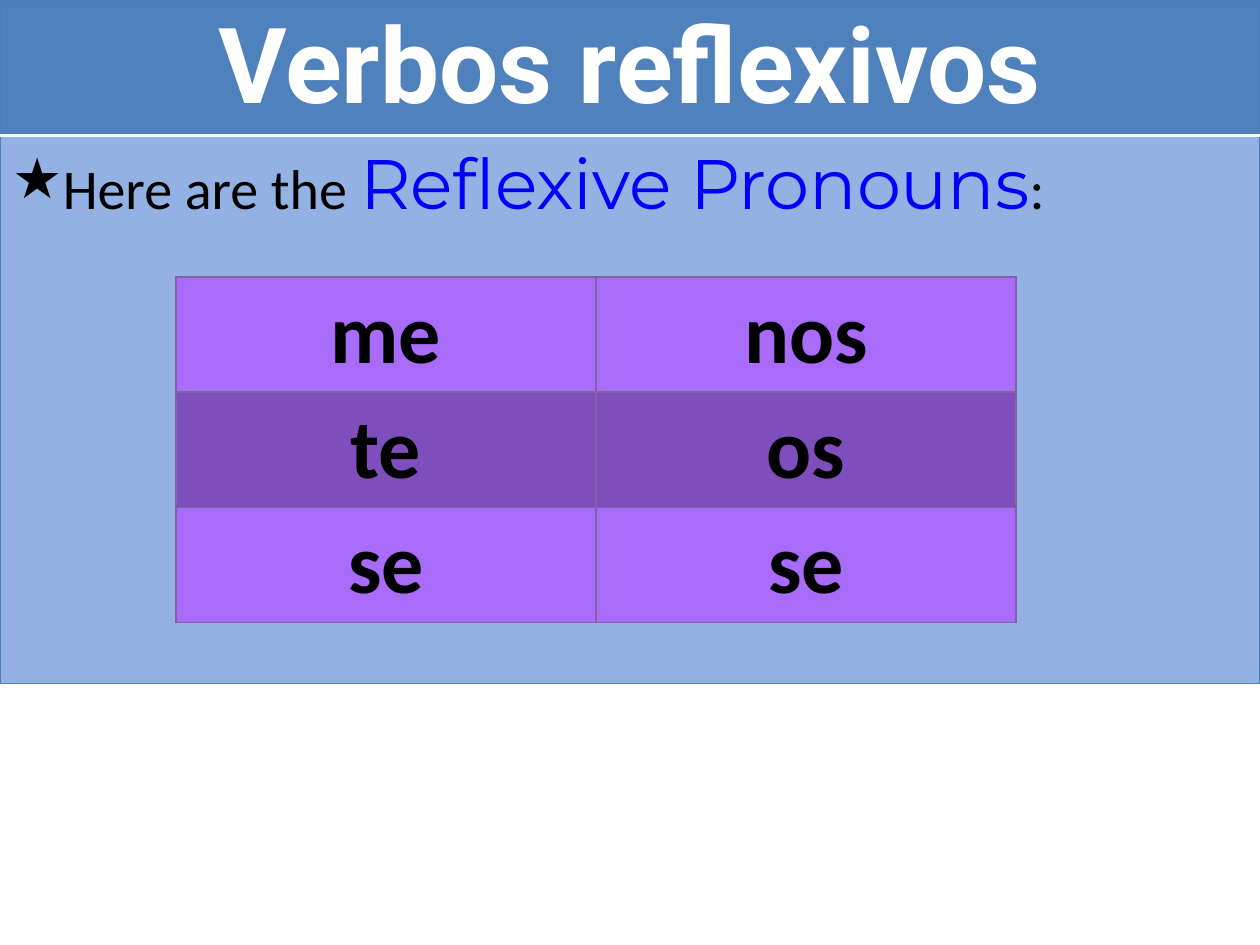
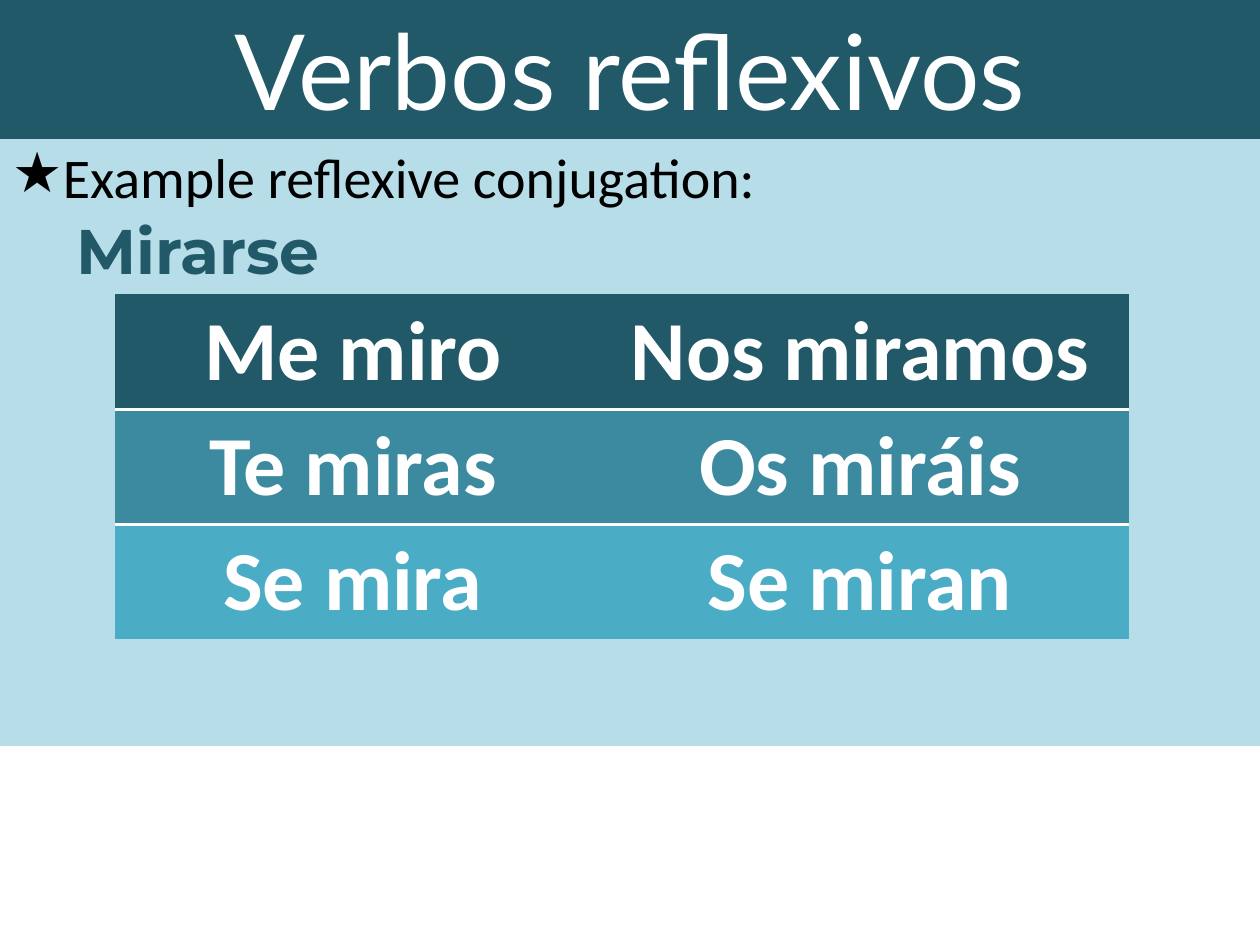
from lxml.etree import SubElement
from pptx import Presentation
from pptx.dml.color import RGBColor
from pptx.enum.text import PP_ALIGN
from pptx.oxml.ns import qn
from pptx.util import Emu, Pt

EMU_PER_PX = 914400 / 126
SLIDE_WIDTH, SLIDE_HEIGHT = 1260, 945
PRONOUN_ROW_HEIGHT = 115
PLAIN_TABLE_STYLE = "{2D5ABB26-0587-4C30-8999-92F81FD0307C}"
TITLE = "Verbos reflexivos"

WHITE = RGBColor(0xFF, 0xFF, 0xFF)
BLACK = RGBColor(0x00, 0x00, 0x00)
LINK_BLUE = RGBColor(0x00, 0x00, 0xFF)
BLUE = RGBColor(0x4F, 0x81, 0xBD)
BLUE_EDGE = RGBColor(0x4B, 0x7E, 0xBC)
PALE_BLUE = RGBColor(0x93, 0xB1, 0xE3)
PURPLE = RGBColor(0xA8, 0x6B, 0xFA)
DARK_PURPLE = RGBColor(0x7D, 0x4E, 0xBC)
PURPLE_EDGE = RGBColor(0x80, 0x64, 0xA2)
DARK_TEAL = RGBColor(0x21, 0x59, 0x68)
MID_TEAL = RGBColor(0x3C, 0x8A, 0x9F)
TEAL = RGBColor(0x4B, 0xAC, 0xC6)
PALE_TEAL = RGBColor(0xB7, 0xDE, 0xE8)


def px(length):
    return Emu(round(length * EMU_PER_PX))


def add_text(paragraph, text, size, color, font="Calibri", bold=False):
    run = paragraph.add_run()
    run.text = text
    run.font.size = Pt(size)
    run.font.name = font
    run.font.bold = bold
    run.font.color.rgb = color


def indent(paragraph, left, first_line=0, bullet=None):
    properties = paragraph._p.get_or_add_pPr()
    properties.set("marL", str(px(left)))
    properties.set("indent", str(px(first_line)))
    if bullet:
        SubElement(properties, qn("a:buChar")).set("char", bullet)


def style_cell(cell, fill, **borders):
    properties = cell._tc.get_or_add_tcPr()
    for side in "LRTB":
        if side in borders:
            color, width = borders[side]
            line = SubElement(properties, qn(f"a:ln{side}"), w=str(Pt(width)))
            solid = SubElement(line, qn("a:solidFill"))
            SubElement(solid, qn("a:srgbClr")).set("val", str(color))
    cell.fill.solid()
    cell.fill.fore_color.rgb = fill


def add_plain_table(slide, left, top, widths, heights):
    frame = slide.shapes.add_table(
        len(heights), len(widths), px(left), px(top), px(sum(widths)), px(sum(heights)))
    table = frame.table
    table._tbl.tblPr.find(qn("a:tableStyleId")).text = PLAIN_TABLE_STYLE
    for column, width in zip(table.columns, widths):
        column.width = px(width)
    for row, height in zip(table.rows, heights):
        row.height = px(height)
    return table


def add_page(deck, heights, band_fill, body_fill, title_font, title_bold=False,
             edge=None, divider=None):
    slide = deck.slides.add_slide(deck.slide_layouts[6])
    page = add_plain_table(slide, 0, 0, [SLIDE_WIDTH], heights)
    band, body = page.cell(0, 0), page.cell(1, 0)
    sides = {"L": edge, "R": edge} if edge else {}
    band_sides = {**sides, "T": edge, "B": divider} if edge else {}
    body_sides = {**sides, "T": divider, "B": edge} if edge else {}
    style_cell(band, band_fill, **band_sides)
    style_cell(body, body_fill, **body_sides)
    heading = band.text_frame.paragraphs[0]
    heading.alignment = PP_ALIGN.CENTER
    add_text(heading, TITLE, 60, WHITE, font=title_font, bold=title_bold)
    intro = body.text_frame.paragraphs[0]
    indent(intro, 39, -39, bullet="★")
    return slide, body.text_frame, intro


def add_forms(slide, left, top, widths, forms, fills, color, row_borders):
    table = add_plain_table(slide, left, top, widths, [PRONOUN_ROW_HEIGHT] * len(forms))
    for row, (pair, fill, borders) in enumerate(zip(forms, fills, row_borders)):
        for column, form in enumerate(pair):
            cell = table.cell(row, column)
            style_cell(cell, fill, **borders)
            paragraph = cell.text_frame.paragraphs[0]
            paragraph.alignment = PP_ALIGN.CENTER
            add_text(paragraph, form, 48, color, bold=True)


def build_pronouns(deck):
    slide, _, intro = add_page(
        deck, [135, 548], BLUE, PALE_BLUE, "Roboto", title_bold=True,
        edge=(BLUE_EDGE, 0.75), divider=(WHITE, 2))
    add_text(intro, "Here are the ", 32, BLACK)
    add_text(intro, "Reflexive Pronouns", 40, LINK_BLUE, font="Montserrat")
    add_text(intro, ":", 32, BLACK)
    grid = dict.fromkeys("LRTB", (PURPLE_EDGE, 1))
    add_forms(slide, 176, 277, [420, 420],
              [("me", "nos"), ("te", "os"), ("se", "se")],
              [PURPLE, DARK_PURPLE, PURPLE], BLACK, [grid] * 3)


def build_conjugation(deck):
    slide, body, intro = add_page(deck, [139, 607], DARK_TEAL, PALE_TEAL, "Lato")
    add_text(intro, "Example reflexive conjugation:", 32, BLACK)
    verb = body.add_paragraph()
    indent(verb, 64)
    add_text(verb, "Mirarse", 36, DARK_TEAL, font="Montserrat", bold=True)
    rule = (WHITE, 2)
    add_forms(slide, 115, 294, [476, 538],
              [("Me miro", "Nos miramos"), ("Te miras", "Os miráis"),
               ("Se mira", "Se miran")],
              [DARK_TEAL, MID_TEAL, TEAL], WHITE, [{"B": rule}, {"T": rule}, {}])


def main():
    deck = Presentation()
    deck.slide_width, deck.slide_height = px(SLIDE_WIDTH), px(SLIDE_HEIGHT)
    build_pronouns(deck)
    build_conjugation(deck)
    deck.save("out.pptx")


if __name__ == "__main__":
    main()
